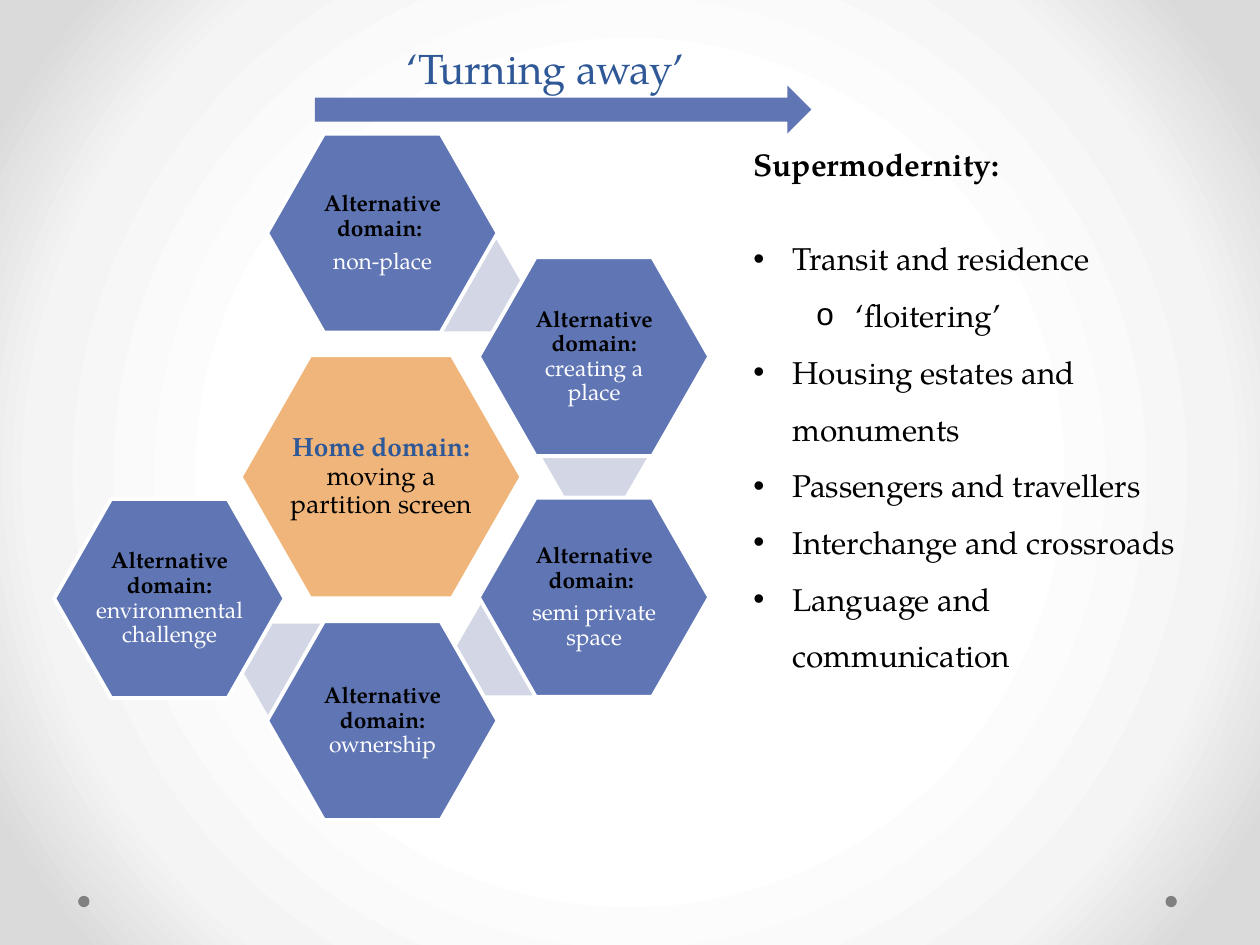
from dataclasses import dataclass

import lxml.etree
import pptx
import pptx.dml.color
import pptx.enum.shapes
import pptx.enum.text
import pptx.oxml
import pptx.oxml.ns
import pptx.util

Inches, Pt = pptx.util.Inches, pptx.util.Pt
Shapes = pptx.enum.shapes.MSO_SHAPE
Align = pptx.enum.text.PP_ALIGN
Anchor = pptx.enum.text.MSO_ANCHOR

FONT = "TeX Gyre Pagella"
BLUE, NAVY, ORANGE, PALE = "6076B4", "2F5897", "F0B57A", "D2D6E5"
BLACK, WHITE, GREY = "000000", "FFFFFF", "808080"
BACKGROUND_STOPS = [(50, "FFFFFF"), (76, "F4F4F4"), (92, "DADADA")]


@dataclass
class Domain:
    left: float
    top: float
    text: str
    heading: str = "Alternative domain: "
    split: bool = False  # text in a paragraph of its own
    width: float = 1.83
    height: float = 1.58
    size: int = 13
    fill: str = BLUE
    heading_color: str = BLACK
    text_color: str = WHITE


@dataclass
class Link:
    left: float
    top: float


@dataclass
class Topic:
    text: str
    level: int = 0


HOME = Domain(1.91, 2.82, "moving a partition screen", "Home domain: ", False,
              2.23, 1.93, 15, ORANGE, NAVY, BLACK)
LINKS = [Link(3.31, 1.9), Link(4.3, 3.26), Link(3.61, 4.79), Link(1.92, 4.95)]
ALTERNATIVES = [
    Domain(2.12, 1.06, "non-place", split=True),
    Domain(3.8, 2.04, "creating a place"),
    Domain(3.8, 3.95, "semi private space", split=True),
    Domain(2.12, 4.93, "ownership"),
    Domain(0.43, 3.96, "environmental challenge"),
]
TOPICS = [
    Topic("Transit and residence"),
    Topic("‘floitering’", 1),
    Topic("Housing estates and monuments"),
    Topic("Passengers and travellers"),
    Topic("Interchange and crossroads"),
    Topic("Language and communication"),
]
BULLETS = ["•", "o"]


def rgb(color: str):
    return pptx.dml.color.RGBColor.from_string(color)


def place(shape, left: float, top: float, width: float, height: float) -> None:
    shape.left, shape.top = Inches(left), Inches(top)
    shape.width, shape.height = Inches(width), Inches(height)


def set_font(font, size: float, color: str, bold: bool = False) -> None:
    font.name, font.size, font.bold = FONT, Pt(size), bold
    font.color.rgb = rgb(color)


def paint_background(slide) -> None:
    """Radial gradient, light in the middle."""
    slide.background.fill.solid()
    stops = "".join(f'<a:gs pos="{position * 1000}"><a:srgbClr val="{color}"/></a:gs>'
                    for position, color in BACKGROUND_STOPS)
    gradient = pptx.oxml.parse_xml(
        f'<a:gradFill {pptx.oxml.ns.nsdecls("a")} rotWithShape="1"><a:gsLst>{stops}</a:gsLst>'
        '<a:path path="circle"><a:fillToRect l="50000" t="50000" r="50000" b="50000"/>'
        '</a:path></a:gradFill>')
    solid = slide.background._cSld.find(".//" + pptx.oxml.ns.qn("a:solidFill"))
    solid.getparent().replace(solid, gradient)


def add_figure(slide, kind, left: float, top: float, width: float, height: float,
               fill: str, outlined: bool = False):
    figure = slide.shapes.add_shape(kind, Inches(left), Inches(top),
                                    Inches(width), Inches(height))
    figure.shadow.inherit = False
    figure.fill.solid()
    figure.fill.fore_color.rgb = rgb(fill)
    if outlined:
        figure.line.color.rgb = rgb(WHITE)
        figure.line.width = Pt(2.25)
    else:
        figure.line.fill.background()
    return figure


def add_link(slide, link: Link) -> None:
    hexagon = add_figure(slide, Shapes.HEXAGON, link.left, link.top, 0.84, 0.73, PALE)
    hexagon.adjustments[0] = 0.289


def add_domain(slide, domain: Domain) -> None:
    """Hexagon with a text box over its middle two thirds."""
    hexagon = add_figure(slide, Shapes.HEXAGON, domain.left, domain.top,
                         domain.width, domain.height, domain.fill, outlined=True)
    hexagon.adjustments[0] = 0.286
    label = slide.shapes.add_textbox(
        Inches(domain.left + domain.width / 6), Inches(domain.top + domain.height / 6),
        Inches(domain.width * 2 / 3), Inches(domain.height * 2 / 3))
    frame = label.text_frame
    frame.word_wrap = True
    frame.vertical_anchor = Anchor.MIDDLE
    frame.margin_left = frame.margin_right = Inches(0.02)
    frame.margin_top = frame.margin_bottom = Inches(0.02)

    first = frame.paragraphs[0]
    last = frame.add_paragraph() if domain.split else first
    for paragraph in frame.paragraphs:
        paragraph.alignment = Align.CENTER
        paragraph.line_spacing = 0.9
        paragraph.space_after = Pt(domain.size * 0.35)
    for paragraph, text, color, bold in (
            (first, domain.heading, domain.heading_color, True),
            (last, domain.text, domain.text_color, False)):
        run = paragraph.add_run()
        run.text = text
        set_font(run.font, domain.size, color, bold)


def set_bullet(paragraph, character: str, margin: float, hanging: float) -> None:
    """Set indents and the bullet; no character means no bullet."""
    properties = paragraph._p.get_or_add_pPr()
    properties.set("marL", str(Inches(margin)))
    properties.set("indent", str(-Inches(hanging)))
    tag = pptx.oxml.ns.qn("a:buChar" if character else "a:buNone")
    bullet = lxml.etree.SubElement(properties, tag)
    if character:
        bullet.set("char", character)


def fill_topics(body) -> None:
    place(body, 5.88, 1.1, 3.62, 5.25)
    frame = body.text_frame
    frame.vertical_anchor = Anchor.TOP
    heading = frame.paragraphs[0]
    heading.text = "Supermodernity:"
    set_bullet(heading, "", 0, 0)
    heading.space_before, heading.space_after = Pt(0), Pt(21.6)
    set_font(heading.font, 18, BLACK, bold=True)
    for topic in TOPICS:
        paragraph = frame.add_paragraph()
        paragraph.text = topic.text
        paragraph.level = topic.level
        set_bullet(paragraph, BULLETS[topic.level], 0.31 + 0.5 * topic.level, 0.31)
        paragraph.line_spacing = 1.5
        paragraph.space_before = Pt(0)
        set_font(paragraph.font, 18, BLACK)


def fill_title(title) -> None:
    place(title, 3.13, 0.29, 3.05, 0.5)
    title.text_frame.vertical_anchor = Anchor.TOP
    paragraph = title.text_frame.paragraphs[0]
    paragraph.text = "‘Turning away’"
    paragraph.alignment = Align.LEFT
    set_font(paragraph.font, 24, NAVY)


def main() -> None:
    presentation = pptx.Presentation()
    presentation.slide_width, presentation.slide_height = Inches(10), Inches(7.5)
    slide = presentation.slides.add_slide(presentation.slide_layouts[1])
    paint_background(slide)
    for left in (0.62, 9.25):
        add_figure(slide, Shapes.OVAL, left, 7.11, 0.09, 0.09, GREY)
    for link in LINKS:
        add_link(slide, link)
    for domain in [HOME, *ALTERNATIVES]:
        add_domain(slide, domain)
    add_figure(slide, Shapes.RIGHT_ARROW, 2.5, 0.68, 3.94, 0.38, BLUE)
    fill_title(slide.shapes.title)
    fill_topics(slide.placeholders[1])
    presentation.save("out.pptx")


if __name__ == "__main__":
    main()
